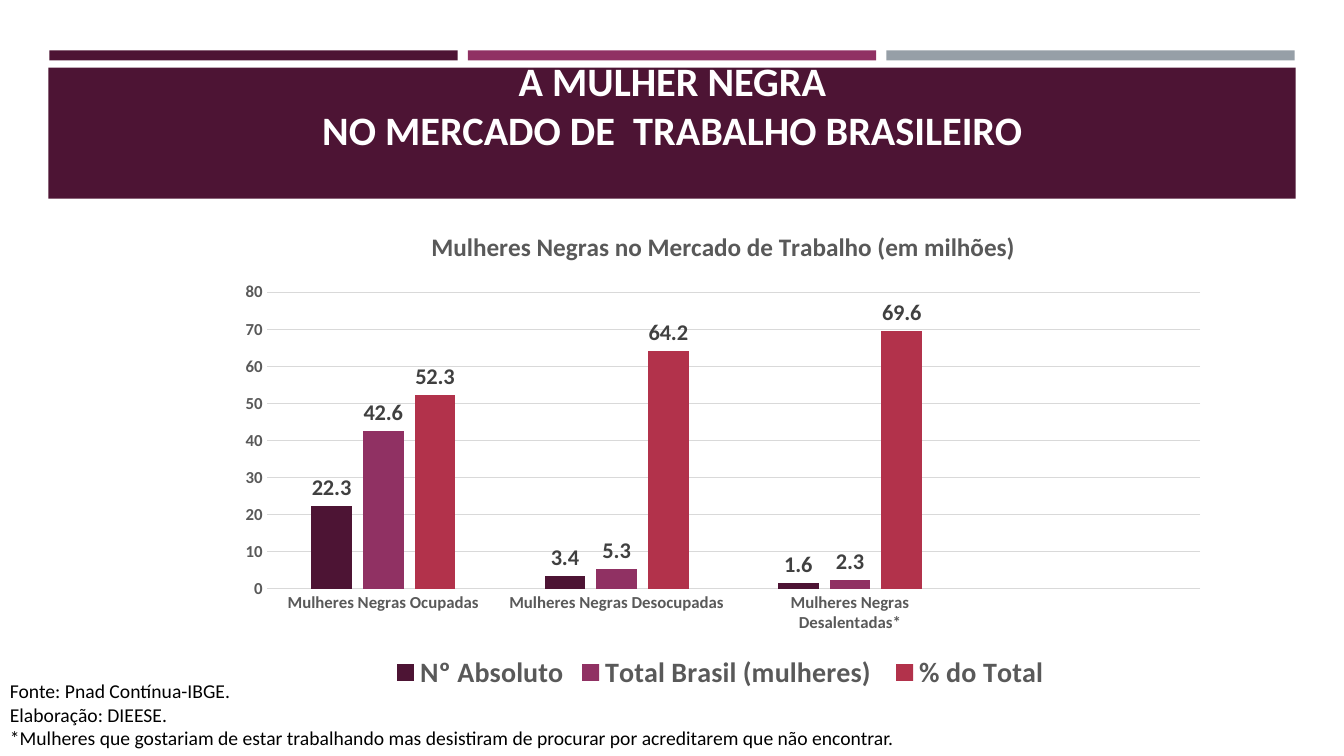
from lxml import etree
from pptx import Presentation
from pptx import util as u
from pptx.chart import data as chart_data
from pptx.dml import color
from pptx.enum import chart as charts, shapes, text
from pptx.oxml import ns

FONT = "Calibri"
PLUM, MAGENTA, GRAY, RED = "4D1434", "903163", "969FA7", "B2324B"
TEXT_GRAY, LABEL_GRAY, LINE_GRAY = "595959", "404040", "D9D9D9"

TITLE = ["A MULHER NEGRA", "NO MERCADO DE  TRABALHO BRASILEIRO"]
NOTES = [
    "Fonte: Pnad Contínua-IBGE.",
    "Elaboração: DIEESE.",
    "*Mulheres que gostariam de estar trabalhando mas desistiram de procurar "
    "por acreditarem que não encontrar.",
]
CHART_TITLE = "Mulheres Negras no Mercado de Trabalho (em milhões)"
CATEGORIES = ["Mulheres Negras Ocupadas", "Mulheres Negras Desocupadas",
              "Mulheres Negras Desalentadas*", ""]
SERIES = [
    ("Nº Absoluto", [22.3, 3.4, 1.6, None], PLUM),
    ("Total Brasil (mulheres) ", [42.6, 5.3, 2.3, None], MAGENTA),
    ("% do Total ", [52.3, 64.2, 69.6, None], RED),
]
PLOT_SHARES = {"x": 0.04, "y": 0.17, "w": 0.94, "h": 0.61}

STRIP_COLORS = [PLUM, MAGENTA, GRAY]
STRIP_LEFT, STRIP_TOP, STRIP_WIDTH, STRIP_HEIGHT, STRIP_GAP = 0.49, 0.5, 4.05, 0.1, 0.1


def rgb(value):
    return color.RGBColor.from_string(value)


def box(*lengths):
    return [u.Inches(length) for length in lengths]


def style(font, size, value, bold=True):
    font.name, font.size, font.bold = FONT, u.Pt(size), bold
    font.color.rgb = rgb(value)


def add_band(slide, left, top, width, height, fill):
    band = slide.shapes.add_shape(shapes.MSO_SHAPE.RECTANGLE, *box(left, top, width, height))
    band.shadow.inherit = False
    band.fill.solid()
    band.fill.fore_color.rgb = rgb(fill)
    band.line.fill.background()
    return band


def add_title(slide):
    title = slide.shapes.title
    title.left, title.top, title.width, title.height = box(0.64, 0.77, 12.06, 0.8)
    frame = title.text_frame
    frame.word_wrap = True
    frame.auto_size = text.MSO_AUTO_SIZE.NONE
    frame.vertical_anchor = text.MSO_ANCHOR.BOTTOM
    paragraph = frame.paragraphs[0]
    paragraph.alignment = text.PP_ALIGN.CENTER
    for index, line in enumerate(TITLE):
        if index:
            paragraph.add_line_break()
        run = paragraph.add_run()
        run.text = line
        style(run.font, 28.8, "FFFFFF")


def add_notes_box(slide):
    frame = slide.shapes.add_textbox(*box(0, 6.69, 10.53, 0.81)).text_frame
    frame.word_wrap = True
    for index, line in enumerate(NOTES):
        paragraph = frame.add_paragraph() if index else frame.paragraphs[0]
        run = paragraph.add_run()
        run.text = line
        style(run.font, 14, "000000", bold=False)


def place_plot(chart):
    """Fix the inner plot area at its shares of the chart frame."""
    plot_area = chart._chartSpace.chart.plotArea
    for old in plot_area.findall(ns.qn("c:layout")):
        plot_area.remove(old)
    layout = etree.Element(ns.qn("c:layout"))
    manual = etree.SubElement(layout, ns.qn("c:manualLayout"))
    settings = {"layoutTarget": "inner", "xMode": "edge", "yMode": "edge", **PLOT_SHARES}
    for name, value in settings.items():
        etree.SubElement(manual, ns.qn("c:" + name)).set("val", str(value))
    plot_area.insert(0, layout)


def add_column_chart(slide):
    data = chart_data.CategoryChartData()
    data.categories = CATEGORIES
    for name, values, _ in SERIES:
        data.add_series(name, values)
    chart = slide.shapes.add_chart(charts.XL_CHART_TYPE.COLUMN_CLUSTERED,
                                   *box(2.25, 2.08, 9.85, 4.82), data).chart
    style(chart.font, 10, "000000")

    chart.has_title = True
    run = chart.chart_title.text_frame.paragraphs[0].add_run()
    run.text = CHART_TITLE
    style(run.font, 18, TEXT_GRAY)
    chart.chart_title.include_in_layout = False

    chart.has_legend = True
    chart.legend.position = charts.XL_LEGEND_POSITION.BOTTOM
    chart.legend.include_in_layout = False
    style(chart.legend.font, 20, TEXT_GRAY)

    for axis in (chart.category_axis, chart.value_axis):
        axis.major_tick_mark = axis.minor_tick_mark = charts.XL_TICK_MARK.NONE
        style(axis.tick_labels.font, 12, TEXT_GRAY)
    values_axis = chart.value_axis
    values_axis.minimum_scale, values_axis.maximum_scale, values_axis.major_unit = 0, 80, 10
    values_axis.format.line.fill.background()
    for line in (chart.category_axis.format.line, values_axis.major_gridlines.format.line):
        line.color.rgb = rgb(LINE_GRAY)
        line.width = u.Pt(0.75)

    plot = chart.plots[0]
    plot.vary_by_categories = False
    plot.gap_width, plot.overlap = 219, -27
    for series, (_, _, fill) in zip(plot.series, SERIES):
        series.format.fill.solid()
        series.format.fill.fore_color.rgb = rgb(fill)
        labels = series.data_labels
        labels.show_value = True
        labels.number_format, labels.number_format_is_linked = "0.0", False
        labels.position = charts.XL_LABEL_POSITION.OUTSIDE_END
        style(labels.font, 16, LABEL_GRAY)
    place_plot(chart)


def main():
    presentation = Presentation()
    presentation.slide_width, presentation.slide_height = box(13.33, 7.5)
    slide = presentation.slides.add_slide(presentation.slide_layouts[5])
    bands = [add_band(slide, STRIP_LEFT + index * (STRIP_WIDTH + STRIP_GAP), STRIP_TOP,
                      STRIP_WIDTH, STRIP_HEIGHT, fill)
             for index, fill in enumerate(STRIP_COLORS)]
    bands.append(add_band(slide, 0.48, 0.67, 12.37, 1.3, PLUM))
    # The title placeholder comes first in the tree, so the bands go behind it.
    for band in bands:
        slide.shapes.title._element.addprevious(band._element)
    add_title(slide)
    add_notes_box(slide)
    add_column_chart(slide)
    presentation.save("out.pptx")


if __name__ == "__main__":
    main()
